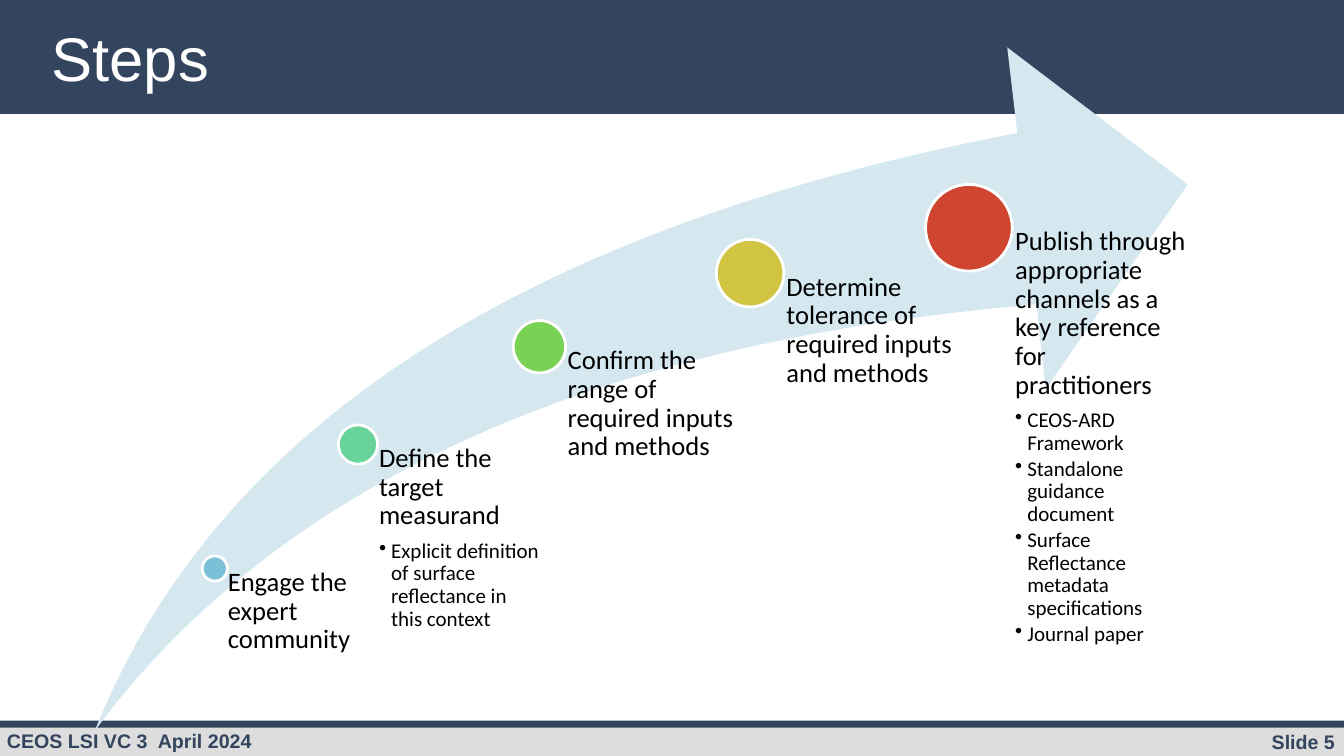
from lxml import etree
from pptx import Presentation
from pptx.dml.color import RGBColor
from pptx.enum.shapes import MSO_SHAPE
from pptx.enum.text import MSO_ANCHOR, MSO_AUTO_SIZE, PP_ALIGN
from pptx.oxml.ns import qn
from pptx.util import Pt

RECTANGLE, OVAL = MSO_SHAPE.RECTANGLE, MSO_SHAPE.OVAL
TOP, MIDDLE = MSO_ANCHOR.TOP, MSO_ANCHOR.MIDDLE
LEFT, RIGHT = PP_ALIGN.LEFT, PP_ALIGN.RIGHT
NO_AUTOFIT = MSO_AUTO_SIZE.NONE
TITLE_ONLY = 5
EMU_PER_PX = 9144  # 100 px to the inch
WIDTH, HEIGHT = 1333, 750
DIAGRAM_BOTTOM = 725

COLORS = {
    "navy": "33445F", "gray": "DDDDDD", "white": "FFFFFF", "black": "000000",
    "arrow": "D5E8F0", "blue": "7BC0D7", "mint": "68D49A", "green": "7AD255",
    "yellow": "D0C442", "red": "CF452F",
}

# Circle centre x, y, diameter, colour, text width, heading, bullets
STEPS = [
    (213, 564, 25, "blue", 142, "Engage the expert community", []),
    (355, 441, 39, "mint", 180, "Define the target measurand",
     ["Explicit definition of surface reflectance in this context"]),
    (535, 344, 52, "green", 209,
     "Confirm the range of required inputs and methods", []),
    (744, 271, 67, "yellow", 217,
     "Determine tolerance of required inputs and methods", []),
    (961, 226, 86, "red", 217,
     "Publish through appropriate channels as a key reference for practitioners",
     ["CEOS-ARD Framework", "Standalone guidance document",
      "Surface Reflectance metadata specifications", "Journal paper"]),
]


def px(value):
    return round(value * EMU_PER_PX)


def color(name):
    return RGBColor.from_string(COLORS[name])


def curve(start, control_1, control_2, end, count=40):
    """Points along a cubic curve, without its start."""
    points = []
    for index in range(1, count + 1):
        t = index / count
        weights = ((1 - t) ** 3, 3 * t * (1 - t) ** 2, 3 * t * t * (1 - t), t ** 3)
        corners = (start, control_1, control_2, end)
        points.append(tuple(sum(w * c[axis] for w, c in zip(weights, corners))
                            for axis in (0, 1)))
    return points


class SlideBuilder:
    heading_font, body_font = "Arial", "Calibri"

    def __init__(self, page):
        self.page = page

    def paint(self, shape, fill, line=None):
        shape.shadow.inherit = False
        shape.fill.solid()
        shape.fill.fore_color.rgb = color(fill)
        if line:
            shape.line.color.rgb = color(line)
            shape.line.width = Pt(2)
        else:
            shape.line.fill.background()

    def shape(self, kind, left, top, width, height, fill, line=None):
        shape = self.page.shapes.add_shape(
            kind, px(left), px(top), px(width), px(height))
        self.paint(shape, fill, line)

    def outline(self, points, fill):
        points = [(px(x), px(y)) for x, y in points]
        builder = self.page.shapes.build_freeform(*points[0])
        builder.add_line_segments(points[1:], close=True)
        self.paint(builder.convert_to_shape(), fill)

    def frame(self, box, margins=(10, 5, 10, 5), anchor=TOP):
        frame = box.text_frame
        frame.word_wrap = True
        frame.auto_size = NO_AUTOFIT
        frame.vertical_anchor = anchor
        (frame.margin_left, frame.margin_top,
         frame.margin_right, frame.margin_bottom) = map(px, margins)
        return frame

    def style(self, para, font, size, ink, bold=False, align=LEFT, spacing=0.9):
        para.alignment = align
        para.line_spacing = spacing
        for span in para.runs:
            span.font.name = font
            span.font.size = Pt(size)
            span.font.bold = bold
            span.font.color.rgb = color(ink)

    def title(self, text, left, top, width, height):
        box = self.page.shapes.title
        box.left, box.top, box.width, box.height = map(px, (left, top, width, height))
        frame = self.frame(box, anchor=MIDDLE)
        frame.text = text
        self.style(frame.paragraphs[0], self.heading_font, 44, "white")
        # Lift the title above the header band
        tree = box.element.getparent()
        tree.append(box.element)

    def text_box(self, left, top, width, height):
        return self.page.shapes.add_textbox(px(left), px(top), px(width), px(height))

    def footer(self, text, left, top, width, height, align):
        frame = self.frame(self.text_box(left, top, width, height))
        frame.text = text
        self.style(frame.paragraphs[0], self.heading_font, 14, "navy",
                   bold=True, align=align, spacing=1.0)

    def bullet(self, para):
        properties = para._p.get_or_add_pPr()
        properties.set("marL", str(px(12)))
        properties.set("indent", str(px(-12)))
        etree.SubElement(properties, qn("a:buChar")).set("char", "•")

    def step(self, x, y, diameter, fill, width, heading, bullets):
        radius = diameter / 2
        self.shape(OVAL, x - radius, y - radius, diameter, diameter, fill, "white")
        box = self.text_box(x, y, width, DIAGRAM_BOTTOM - y)
        frame = self.frame(box, margins=(round(diameter * 0.53), 0, 0, 0))
        frame.text = heading
        self.style(frame.paragraphs[0], self.body_font, 19, "black")
        for index, text in enumerate(bullets):
            para = frame.add_paragraph()
            para.text = text
            para.level = 1
            self.bullet(para)
            para.space_before = Pt(2.2 if index else 6.7)
            self.style(para, self.body_font, 15, "black")


def main():
    deck = Presentation()
    deck.slide_width, deck.slide_height = px(WIDTH), px(HEIGHT)
    slide = SlideBuilder(deck.slides.add_slide(deck.slide_layouts[TITLE_ONLY]))

    # Header and footer bands
    slide.shape(RECTANGLE, 0, 0, WIDTH, 113, "navy")
    slide.shape(RECTANGLE, 0, 719, WIDTH, 31, "gray")
    slide.shape(RECTANGLE, 0, 715, WIDTH, 7, "navy")
    slide.footer("Slide 5", 1123, 719, 211, 34, RIGHT)
    slide.footer("CEOS LSI VC 3  April 2024", -3, 718, 539, 34, LEFT)
    slide.title("Steps", 41, 19, 1076, 85)

    # Rising arrow
    tail, upper, lower = (94, DIAGRAM_BOTTOM), (1009, 132), (1028, 302)
    head = [(999, 47), (1178, 183), (1037, 386), lower]
    slide.outline(
        [tail] + curve(tail, (214, 424), (519, 226), upper) + head
        + curve(lower, (586, 339), (274, 481), tail), "arrow")

    # Steps along the arrow
    for step in STEPS:
        slide.step(*step)

    deck.save("out.pptx")


if __name__ == "__main__":
    main()
